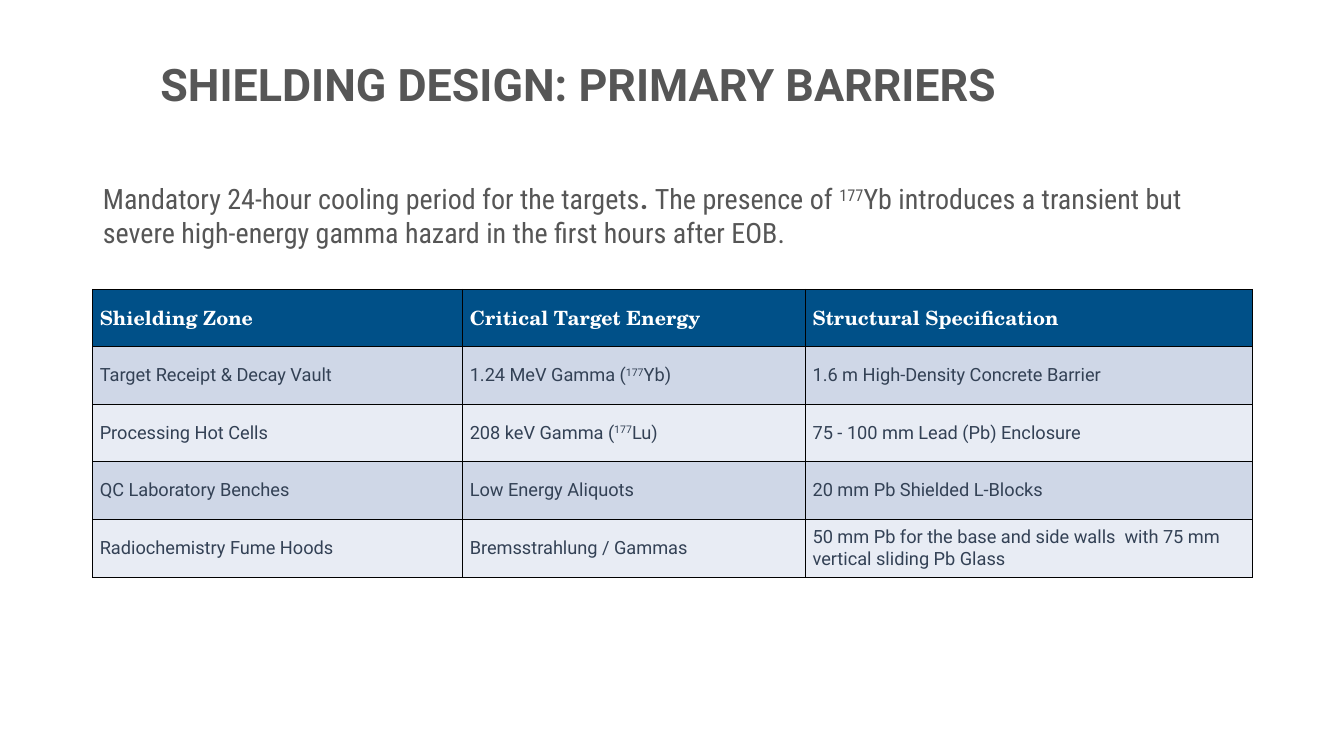
from dataclasses import dataclass

from lxml.etree import SubElement
from pptx import Presentation
from pptx.dml.color import RGBColor
from pptx.enum.text import MSO_ANCHOR, MSO_AUTO_SIZE, PP_ALIGN
from pptx.oxml.ns import qn
from pptx.slide import Slide
from pptx.table import _Cell
from pptx.text.text import _Paragraph
from pptx.util import Inches, Pt

COLOURS = {
    "heading": "565656",
    "header fill": "005088",
    "header text": "FFFFFF",
    "cell text": "334155",
    "odd row": "CFD7E7",
    "even row": "E8ECF4",
    "border": "000000",
}


@dataclass(frozen=True)
class Style:
    font: str
    size: float
    colour: str
    bold: bool = False


@dataclass(frozen=True)
class Span:
    text: str
    bold: bool = False
    superscript: bool = False


TITLE = Style("Roboto", 32, "heading", True)
SUMMARY = Style("Roboto Condensed", 20, "heading")
HEADER = Style("TeX Gyre Schola", 14, "header text", True)
CELL = Style("Roboto", 13, "cell text")

MASS_NUMBER = Span("177", superscript=True)
SUMMARY_SPANS = [
    Span("Mandatory 24-hour cooling period for the targets"),
    Span(". ", bold=True),
    Span("The presence of "),
    MASS_NUMBER,
    Span("Yb introduces a transient but severe high-energy gamma hazard "
         "in the first hours after EOB."),
]
COLUMN_WIDTHS = [3.67, 3.4, 4.43]
ROW_HEIGHTS = [0.57, 0.57, 0.57, 0.57, 0.58]
ROWS: list[list[list[Span]]] = [
    [[Span("Shielding Zone")], [Span("Critical Target Energy")],
     [Span("Structural Specification")]],
    [[Span("Target Receipt & Decay Vault")],
     [Span("1.24 MeV Gamma ("), MASS_NUMBER, Span("Yb)")],
     [Span("1.6 m High-Density Concrete Barrier")]],
    [[Span("Processing Hot Cells")],
     [Span("208 keV Gamma ("), MASS_NUMBER, Span("Lu)")],
     [Span("75 - 100 mm Lead (Pb) Enclosure")]],
    [[Span("QC Laboratory Benches")], [Span("Low Energy Aliquots")],
     [Span("20 mm Pb Shielded L-Blocks")]],
    [[Span("Radiochemistry Fume Hoods")], [Span("Bremsstrahlung / Gammas")],
     [Span("50 mm Pb for the base and side walls  with 75 mm "
           "vertical sliding Pb Glass")]],
]


def colour(name: str) -> RGBColor:
    return RGBColor.from_string(COLOURS[name])


def write_spans(paragraph: _Paragraph, spans: list[Span], style: Style) -> None:
    for span in spans:
        run = paragraph.add_run()
        run.text = span.text
        run.font.name = style.font
        run.font.size = Pt(style.size)
        run.font.bold = style.bold or span.bold
        run.font.color.rgb = colour(style.colour)
        if span.superscript:
            run._r.get_or_add_rPr().set("baseline", "30000")


def add_borders(cell: _Cell) -> None:
    """Outline all four sides; call before filling, as the XML order requires."""
    properties = cell._tc.get_or_add_tcPr()
    for side in ("lnL", "lnR", "lnT", "lnB"):
        line = SubElement(properties, qn(f"a:{side}"), w=str(Pt(0.75)))
        fill = SubElement(line, qn("a:solidFill"))
        SubElement(fill, qn("a:srgbClr"), val=COLOURS["border"])


def place_text(page: Slide, index: int, area: tuple[float, ...],
               spans: list[Span], style: Style) -> _Paragraph:
    """Move a placeholder, fill it and return its left-aligned paragraph."""
    box = page.placeholders[index]
    box.left, box.top, box.width, box.height = map(Inches, area)
    box.text_frame.word_wrap = True
    box.text_frame.auto_size = MSO_AUTO_SIZE.NONE
    paragraph = box.text_frame.paragraphs[0]
    paragraph.alignment = PP_ALIGN.LEFT
    paragraph.space_before = Pt(0)
    write_spans(paragraph, spans, style)
    return paragraph


def add_title(page: Slide) -> None:
    paragraph = place_text(page, 0, (1.49, -0.3, 12.68, 1.45),
                           [Span("SHIELDING DESIGN: PRIMARY BARRIERS")], TITLE)
    paragraph.line_spacing = 0.9
    page.shapes.title.text_frame.vertical_anchor = MSO_ANCHOR.BOTTOM


def add_summary(page: Slide) -> None:
    paragraph = place_text(page, 1, (0.92, 1.75, 11.5, 0.77),
                           SUMMARY_SPANS, SUMMARY)
    properties = paragraph._p.get_or_add_pPr()
    properties.set("marL", "0")
    properties.set("indent", "0")
    SubElement(properties, qn("a:buNone"))


def add_shielding_table(page: Slide) -> None:
    table = page.shapes.add_table(
        len(ROWS), len(COLUMN_WIDTHS), Inches(0.92), Inches(2.87),
        Inches(sum(COLUMN_WIDTHS)), Inches(sum(ROW_HEIGHTS))).table
    for column, width in zip(table.columns, COLUMN_WIDTHS):
        column.width = Inches(width)
    for number, (row, height, contents) in enumerate(
            zip(table.rows, ROW_HEIGHTS, ROWS)):
        row.height = Inches(height)
        band = "odd row" if number % 2 else "even row"
        for cell, spans in zip(row.cells, contents):
            cell.margin_left = cell.margin_right = Inches(0.07)
            cell.margin_top = cell.margin_bottom = Inches(0.03)
            cell.vertical_anchor = MSO_ANCHOR.MIDDLE
            add_borders(cell)
            cell.fill.solid()
            cell.fill.fore_color.rgb = colour(band if number else "header fill")
            write_spans(cell.text_frame.paragraphs[0], spans,
                        CELL if number else HEADER)


def main() -> None:
    deck = Presentation()
    deck.slide_width, deck.slide_height = Inches(13.33), Inches(7.5)
    page = deck.slides.add_slide(deck.slide_layouts[1])
    add_title(page)
    add_summary(page)
    add_shielding_table(page)
    deck.save("out.pptx")


if __name__ == "__main__":
    main()
